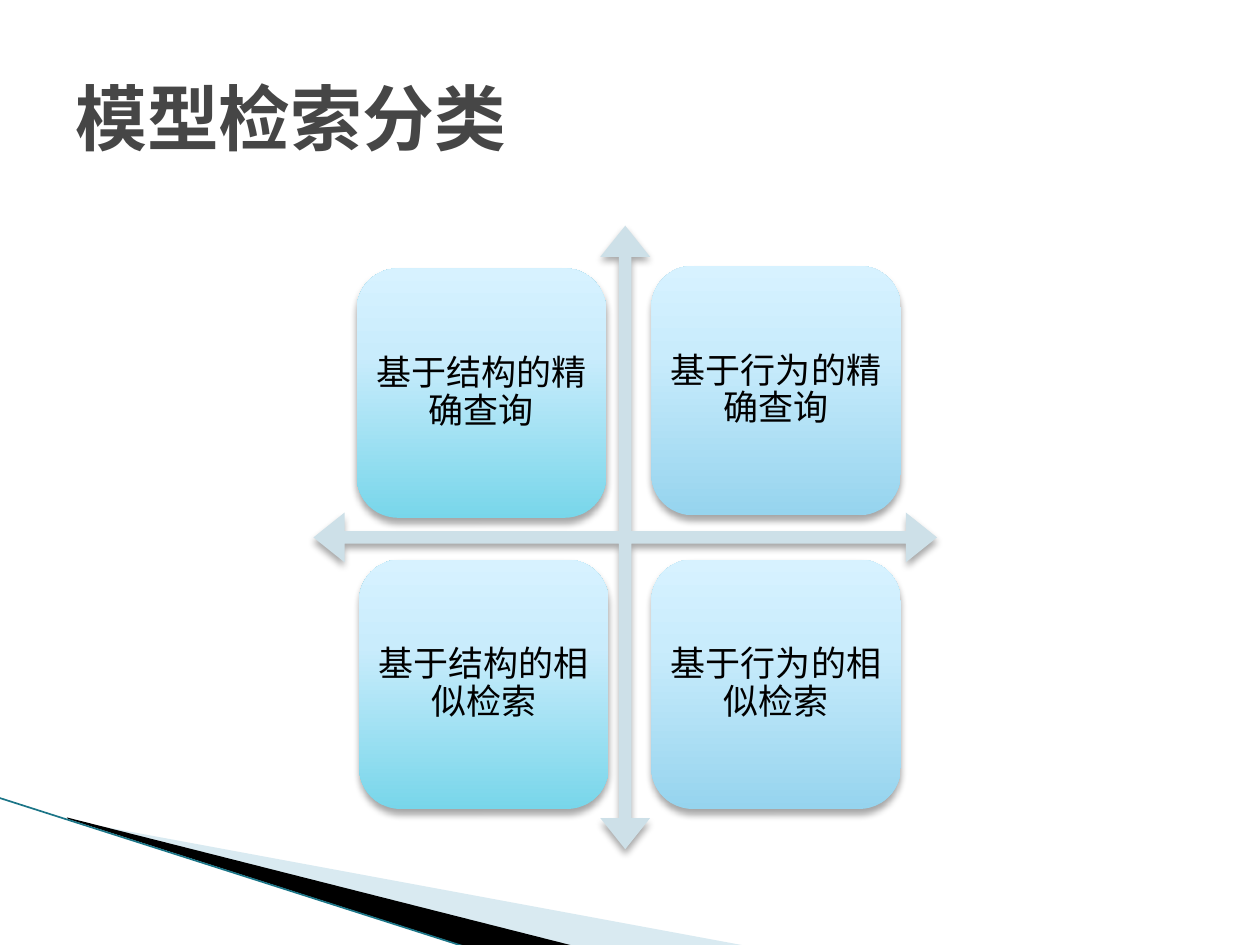
from lxml import etree
from pptx import Presentation
from pptx import util as u
from pptx.dml import color
from pptx.enum import shapes, text
from pptx.oxml import ns

FONT = "DejaVu Sans Mono"
TITLE = "模型检索分类"
TEAL, BLUE = "78D6EA", "96D4EE"
CARD_SIZE = 5.03
CARDS = [
    ("基于结构的精确查询", 7.19, 5.41, TEAL),
    ("基于行为的精确查询", 13.13, 5.36, BLUE),
    ("基于结构的相似检索", 7.24, 11.28, TEAL),
    ("基于行为的相似检索", 13.13, 11.28, BLUE),
]
AXES = (6.32, 4.55, 12.57, 12.57)
WEDGES = [
    ([(1.4, 16.54), (15.11, 19.08), (11.58, 19.08), (1.4, 16.51)], "A0CBDC", 40),
    ([(1.35, 16.48), (11.61, 19.08), (9.45, 19.1), (1.37, 16.51)], "000000", 100),
]
EDGE = (-0.03, 16.08, 9.42, 19.1)


def rgb(value):
    return color.RGBColor.from_string(value)


def child(parent, tag, **attributes):
    element = etree.SubElement(parent, ns.qn(tag))
    for name, value in attributes.items():
        element.set(name, str(value))
    return element


def set_alpha(fill, percent):
    node = fill.fore_color._xFill.find(ns.qn("a:srgbClr"))
    child(node, "a:alpha", val=percent * 1000)


def add_shadow(shape):
    shape.shadow.inherit = False
    effects = shape._element.spPr.find(ns.qn("a:effectLst"))
    outer = child(effects, "a:outerShdw", blurRad=u.Pt(4), dist=u.Pt(3),
                  dir=5400000, rotWithShape=0)
    shade = child(outer, "a:srgbClr", val="000000")
    child(shade, "a:alpha", val=35000)


def set_gradient(fill, stops):
    fill.gradient()
    fill.gradient_angle = 90
    stop_list = fill._fill._gradFill.find(ns.qn("a:gsLst"))
    for old in list(stop_list):
        stop_list.remove(old)
    for position, value in stops:
        stop = child(stop_list, "a:gs", pos=position * 1000)
        child(stop, "a:srgbClr", val=value)


def write(shape, words, size, hue="000000", bold=False, align=None, spacing=None, inset=None):
    frame = shape.text_frame
    frame.word_wrap = True
    frame.vertical_anchor = text.MSO_ANCHOR.MIDDLE
    if inset is not None:
        frame.margin_left = frame.margin_right = u.Cm(inset)
        frame.margin_top = frame.margin_bottom = u.Cm(inset)
    para = frame.paragraphs[0]
    para.alignment = align
    para.line_spacing = spacing
    span = para.add_run()
    span.text = words
    span.font.name = FONT
    span.font.size = u.Pt(size)
    span.font.bold = bold
    span.font.color.rgb = rgb(hue)
    child(span._r.get_or_add_rPr(), "a:ea", typeface=FONT)


def main():
    deck = Presentation()
    deck.slide_width, deck.slide_height = u.Cm(25.4), u.Cm(19.05)
    page = deck.slides.add_slide(deck.slide_layouts[6])

    for points, hue, opacity in WEDGES:
        corners = [(u.Cm(x), u.Cm(y)) for x, y in points]
        builder = page.shapes.build_freeform(*corners[0])
        builder.add_line_segments(corners[1:], close=True)
        wedge = builder.convert_to_shape()
        wedge.shadow.inherit = False
        wedge.fill.solid()
        wedge.fill.fore_color.rgb = rgb(hue)
        set_alpha(wedge.fill, opacity)
        wedge.line.fill.background()

    edge = page.shapes.add_connector(shapes.MSO_CONNECTOR.STRAIGHT, *map(u.Cm, EDGE))
    edge.line.color.rgb = rgb("1B7587")
    edge.line.width = u.Pt(0.95)
    child(edge._element.spPr, "a:effectLst")

    title = page.shapes.add_textbox(*map(u.Cm, (1.27, 0.76, 22.86, 3.18)))
    write(title, TITLE, 41, hue="464646", bold=True)

    axes = page.shapes.add_shape(shapes.MSO_SHAPE.QUAD_ARROW, *map(u.Cm, AXES))
    for index, ratio in enumerate((0.02, 0.04, 0.05)):
        axes.adjustments[index] = ratio
    axes.fill.solid()
    axes.fill.fore_color.rgb = rgb("CDE0E8")
    axes.line.fill.background()
    add_shadow(axes)

    for words, left, top, hue in CARDS:
        card = page.shapes.add_shape(shapes.MSO_SHAPE.ROUNDED_RECTANGLE, u.Cm(left),
                                     u.Cm(top), u.Cm(CARD_SIZE), u.Cm(CARD_SIZE))
        set_gradient(card.fill, [(0, hue), (65, "C9ECFC"), (100, "D7F2FF")])
        card.line.fill.background()
        add_shadow(card)
        write(card, words, 20, align=text.PP_ALIGN.CENTER, spacing=0.9, inset=0)

    deck.save("out.pptx")


if __name__ == "__main__":
    main()
